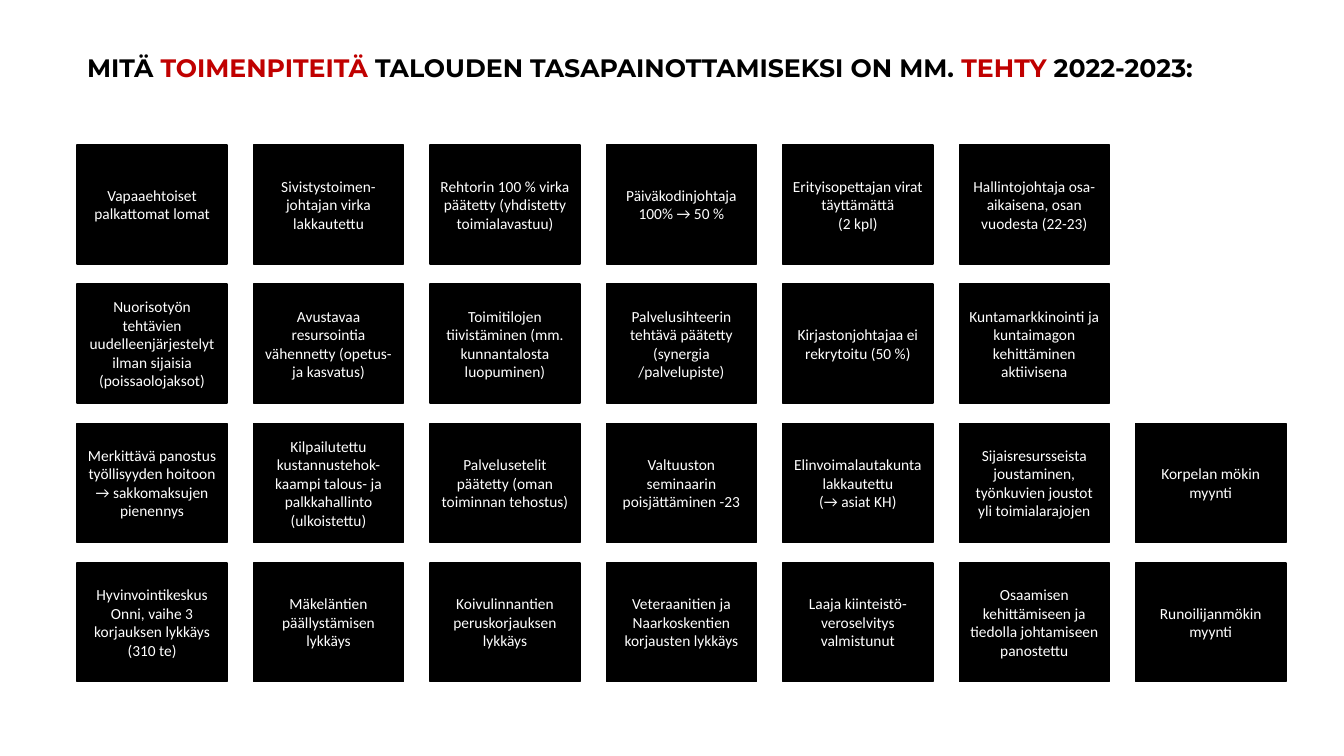
from pptx import Presentation
from pptx.dml.color import RGBColor
from pptx.enum.shapes import MSO_SHAPE
from pptx.enum.text import MSO_ANCHOR, MSO_AUTO_SIZE, PP_ALIGN
from pptx.util import Pt

BLACK = RGBColor(0x00, 0x00, 0x00)
WHITE = RGBColor(0xFF, 0xFF, 0xFF)
RED = RGBColor(0xC0, 0x00, 0x00)

HEADING = [
    ("MITÄ ", BLACK),
    ("TOIMENPITEITÄ", RED),
    (" TALOUDEN TASAPAINOTTAMISEKSI ON MM. ", BLACK),
    ("TEHTY ", RED),
    ("2022-2023:", BLACK),
]

MEASURES = [
    [
        "Vapaaehtoiset palkattomat lomat",
        "Sivistystoimen-\njohtajan virka lakkautettu",
        "Rehtorin 100 % virka päätetty (yhdistetty toimialavastuu)",
        "Päiväkodinjohtaja 100% → 50 %",
        "Erityisopettajan virat täyttämättä\n(2 kpl)",
        "Hallintojohtaja osa-aikaisena, osan vuodesta (22-23)",
    ],
    [
        "Nuorisotyön tehtävien uudelleenjärjestelyt ilman sijaisia (poissaolojaksot)",
        "Avustavaa resursointia vähennetty (opetus- ja kasvatus)",
        "Toimitilojen tiivistäminen (mm. kunnantalosta luopuminen)",
        "Palvelusihteerin tehtävä päätetty (synergia /palvelupiste)",
        "Kirjastonjohtajaa ei rekrytoitu (50 %)",
        "Kuntamarkkinointi ja kuntaimagon kehittäminen aktiivisena",
    ],
    [
        "Merkittävä panostus työllisyyden hoitoon → sakkomaksujen pienennys",
        "Kilpailutettu kustannustehok-kaampi talous- ja palkkahallinto (ulkoistettu)",
        "Palvelusetelit päätetty (oman toiminnan tehostus)",
        "Valtuuston seminaarin poisjättäminen -23",
        "Elinvoimalautakunta lakkautettu\n(→ asiat KH)",
        "Sijaisresursseista joustaminen, työnkuvien joustot yli toimialarajojen",
        "Korpelan mökin myynti",
    ],
    [
        "Hyvinvointikeskus Onni, vaihe 3 korjauksen lykkäys (310 te)",
        "Mäkeläntien päällystämisen lykkäys",
        "Koivulinnantien peruskorjauksen lykkäys",
        "Veteraanitien ja Naarkoskentien korjausten lykkäys",
        "Laaja kiinteistö-veroselvitys valmistunut",
        "Osaamisen kehittämiseen ja tiedolla johtamiseen panostettu",
        "Runoilijanmökin myynti",
    ],
]

TILE_WIDTH = 107.3
TILE_HEIGHT = 85


def style_run(run, font_name, size, color, bold=False):
    run.font.name = font_name
    run.font.size = Pt(size)
    run.font.color.rgb = color
    run.font.bold = bold


def add_heading(slide, left, top, width, height):
    heading = slide.shapes.title
    heading.left, heading.top = Pt(left), Pt(top)
    heading.width, heading.height = Pt(width), Pt(height)
    frame = heading.text_frame
    frame.word_wrap = True
    frame.auto_size = MSO_AUTO_SIZE.SHAPE_TO_FIT_TEXT
    frame.vertical_anchor = MSO_ANCHOR.TOP
    paragraph = frame.paragraphs[0]
    paragraph.alignment = PP_ALIGN.LEFT
    for words, color in HEADING:
        run = paragraph.add_run()
        run.text = words
        style_run(run, "Montserrat", 18, color, bold=True)


def add_measure(slide, measure, left, top):
    tile = slide.shapes.add_shape(
        MSO_SHAPE.RECTANGLE, Pt(left), Pt(top), Pt(TILE_WIDTH), Pt(TILE_HEIGHT)
    )
    tile.shadow.inherit = False
    tile.fill.solid()
    tile.fill.fore_color.rgb = BLACK
    tile.line.color.rgb = BLACK
    tile.line.width = Pt(1)
    frame = tile.text_frame
    frame.word_wrap = True
    frame.vertical_anchor = MSO_ANCHOR.MIDDLE
    frame.text = measure
    for paragraph in frame.paragraphs:
        paragraph.alignment = PP_ALIGN.CENTER
        for run in paragraph.runs:
            style_run(run, "Calibri", 11, WHITE)


def add_measure_grid(slide, left, top, width, height):
    column_step = (width - TILE_WIDTH) / (max(map(len, MEASURES)) - 1)
    row_step = (height - TILE_HEIGHT) / (len(MEASURES) - 1)
    for row, measures in enumerate(MEASURES):
        for column, measure in enumerate(measures):
            add_measure(slide, measure, left + column * column_step, top + row * row_step)


def main():
    presentation = Presentation()
    presentation.slide_width = Pt(960)
    presentation.slide_height = Pt(540)
    slide = presentation.slides.add_slide(presentation.slide_layouts[5])
    add_heading(slide, 55, 34, 875.5, 29)
    add_measure_grid(slide, 55, 103.5, 863.5, 383.5)
    presentation.save("out.pptx")


if __name__ == "__main__":
    main()
